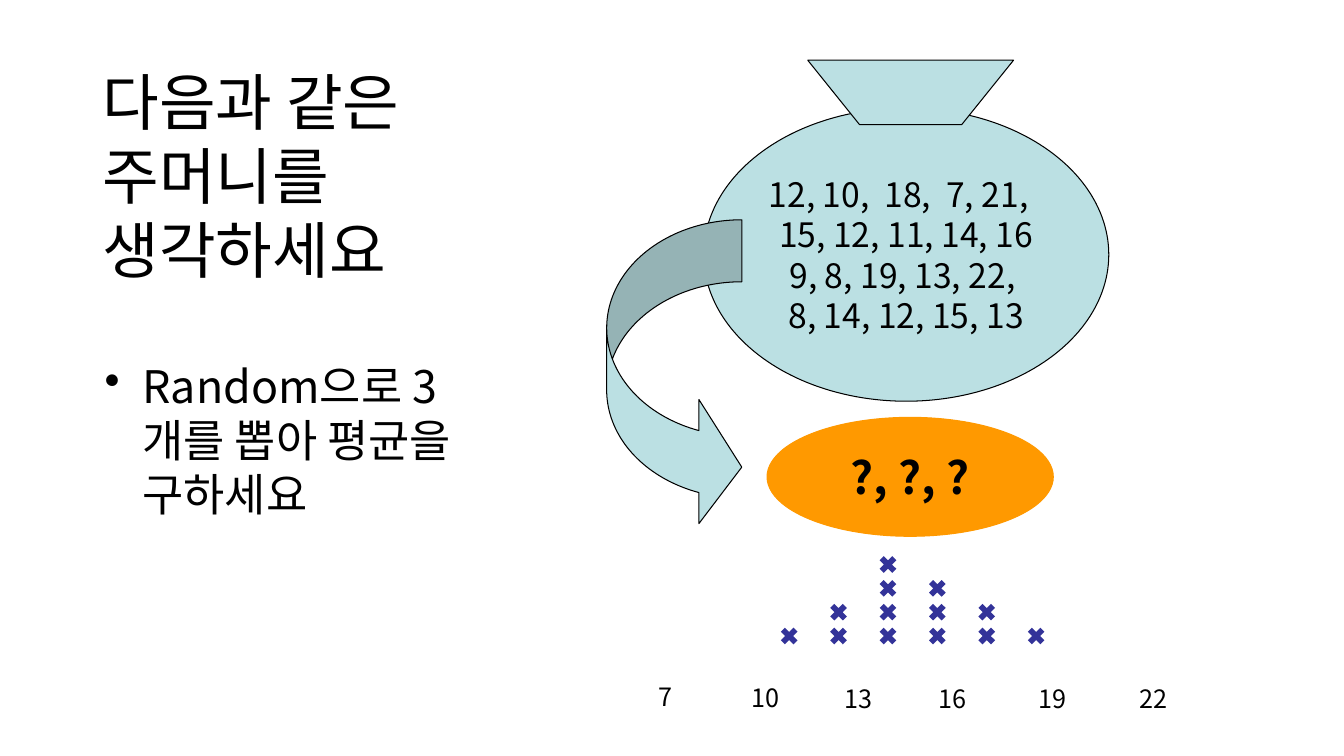
from dataclasses import dataclass
from pptx import Presentation
from pptx.dml.color import RGBColor
from pptx.enum.shapes import MSO_SHAPE as Preset
from pptx.enum.text import MSO_ANCHOR as Anchor, PP_ALIGN as Align
from pptx.oxml.xmlchemy import OxmlElement as Element
from pptx.util import Pt


@dataclass(frozen=True)
class Theme:
    font: str = "Noto Sans CJK KR"
    ink: str = "000000"
    bag: str = "BBE0E3"
    sample: str = "FF9900"
    mark: str = "333399"
    title: int = 44
    body: int = 32
    number: int = 24
    axis: int = 18
    line: float = 0.75
    leading: float = 1.205


@dataclass(frozen=True)
class Box:
    left: float
    top: float
    width: float
    height: float

    def lengths(self):
        return [Pt(value) for value in (self.left, self.top, self.width, self.height)]


THEME = Theme()


def paint(shape, fill, line=None):
    shape.shadow.inherit = False
    shape.fill.solid()
    shape.fill.fore_color.rgb = RGBColor.from_string(fill)
    if line:
        shape.line.color.rgb = RGBColor.from_string(line)
        shape.line.width = Pt(THEME.line)
    else:
        shape.line.fill.background()


def write(shape, text, size, align=Align.LEFT, anchor=Anchor.TOP, wrap=True, bold=False):
    frame = shape.text_frame
    frame.text = text
    frame.word_wrap = wrap
    frame.vertical_anchor = anchor
    for para in frame.paragraphs:
        para.alignment = align
        para.line_spacing = Pt(round(size * THEME.leading, 1))
        for span in para.runs:
            span.font.size = Pt(size)
            span.font.bold = bold
            span.font.name = THEME.font
            span.font.color.rgb = RGBColor.from_string(THEME.ink)
            east_asian = Element("a:ea")
            east_asian.set("typeface", THEME.font)
            span.font._element.find("{*}latin").addnext(east_asian)


def add_title(page, box):
    title = page.shapes.add_textbox(*box.lengths())
    write(title, "다음과 같은 \v주머니를 \v생각하세요", THEME.title, anchor=Anchor.MIDDLE)


def add_task(page, box):
    task = page.shapes.add_textbox(*box.lengths())
    write(task, "Random으로 3개를 뽑아 평균을 구하세요", THEME.body)
    settings = task.text_frame.paragraphs[0]._p.get_or_add_pPr()
    settings.set("marL", str(Pt(27)))
    settings.set("indent", str(Pt(-27)))
    bullet = Element("a:buChar")
    bullet.set("char", "•")
    settings.append(bullet)


def add_bag(page, box):
    group = page.shapes.add_group_shape()
    neck_width, neck_height, slant = 147, 45.5, 36.7
    body_top = 34
    body_box = Box(box.left, box.top + body_top, box.width, box.height - body_top)
    body = group.shapes.add_shape(Preset.OVAL, *body_box.lengths())
    paint(body, THEME.bag, THEME.ink)
    numbers = "12, 10,  18,  7, 21,  \n15, 12, 11, 14, 16\n9, 8, 19, 13, 22, \n8, 14, 12, 15, 13"
    write(body, numbers, THEME.number, Align.CENTER, Anchor.MIDDLE, wrap=False)

    left = box.left + 74.2
    right, bottom = left + neck_width, box.top + neck_height
    outline = group.shapes.build_freeform(left, box.top, scale=Pt(1))
    corners = [(left + slant, bottom), (right - slant, bottom), (right, box.top)]
    outline.add_line_segments(corners, close=True)
    paint(outline.convert_to_shape(), THEME.bag, THEME.ink)


def add_draw_arrow(page, box):
    arrow = page.shapes.add_shape(Preset.CURVED_RIGHT_ARROW, *box.lengths())
    for index, value in enumerate((0.459, 0.918, 0.317)):
        arrow.adjustments[index] = value
    paint(arrow, THEME.bag, THEME.ink)


def add_sample(page, box):
    sample = page.shapes.add_shape(Preset.OVAL, *box.lengths())
    paint(sample, THEME.sample, THEME.sample)
    write(sample, "?, ?, ?", THEME.body, Align.CENTER, Anchor.MIDDLE, wrap=False, bold=True)


def add_axis(page, box):
    group = page.shapes.add_group_shape()
    labels = {"7": (0, 0), "10": (67, 0.7), "13": (133.2, 1.4),
              "16": (200, 1.4), "19": (272, 1.4), "22": (344, 1.4)}
    for text, (across, down) in labels.items():
        place = Box(box.left + across, box.top + down, box.width - 344, box.height)
        label = group.shapes.add_textbox(*place.lengths())
        write(label, text, THEME.axis, wrap=text != "7")


def add_dot_plot(page, box):
    counts = [1, 2, 4, 3, 2, 1]
    size = 17.3
    across = (box.width - size) / (len(counts) - 1)
    up = (box.height - size) / (max(counts) - 1)
    base = box.top + box.height - size
    for column, count in enumerate(counts):
        for row in range(count):
            place = Box(box.left + column * across, base - row * up, size, size)
            mark = page.shapes.add_shape(Preset.MATH_MULTIPLY, *place.lengths())
            paint(mark, THEME.mark)


def main():
    deck = Presentation()
    deck.slide_width, deck.slide_height = Pt(960), Pt(540)
    page = deck.slides.add_slide(deck.slide_layouts[6])
    add_title(page, Box(66.2, 37.4, 256.3, 175))
    add_task(page, Box(67.7, 252.7, 278.6, 141.8))
    add_bag(page, Box(502.6, 43.2, 289.4, 243.4))
    add_draw_arrow(page, Box(433.4, 157, 96.5, 221))
    add_sample(page, Box(547.9, 298.1, 204.5, 85))
    add_axis(page, Box(463, 483.1, 384.3, 28.8))
    add_dot_plot(page, Box(555.1, 394.6, 193.7, 68.4))
    deck.save("out.pptx")


if __name__ == "__main__":
    main()
